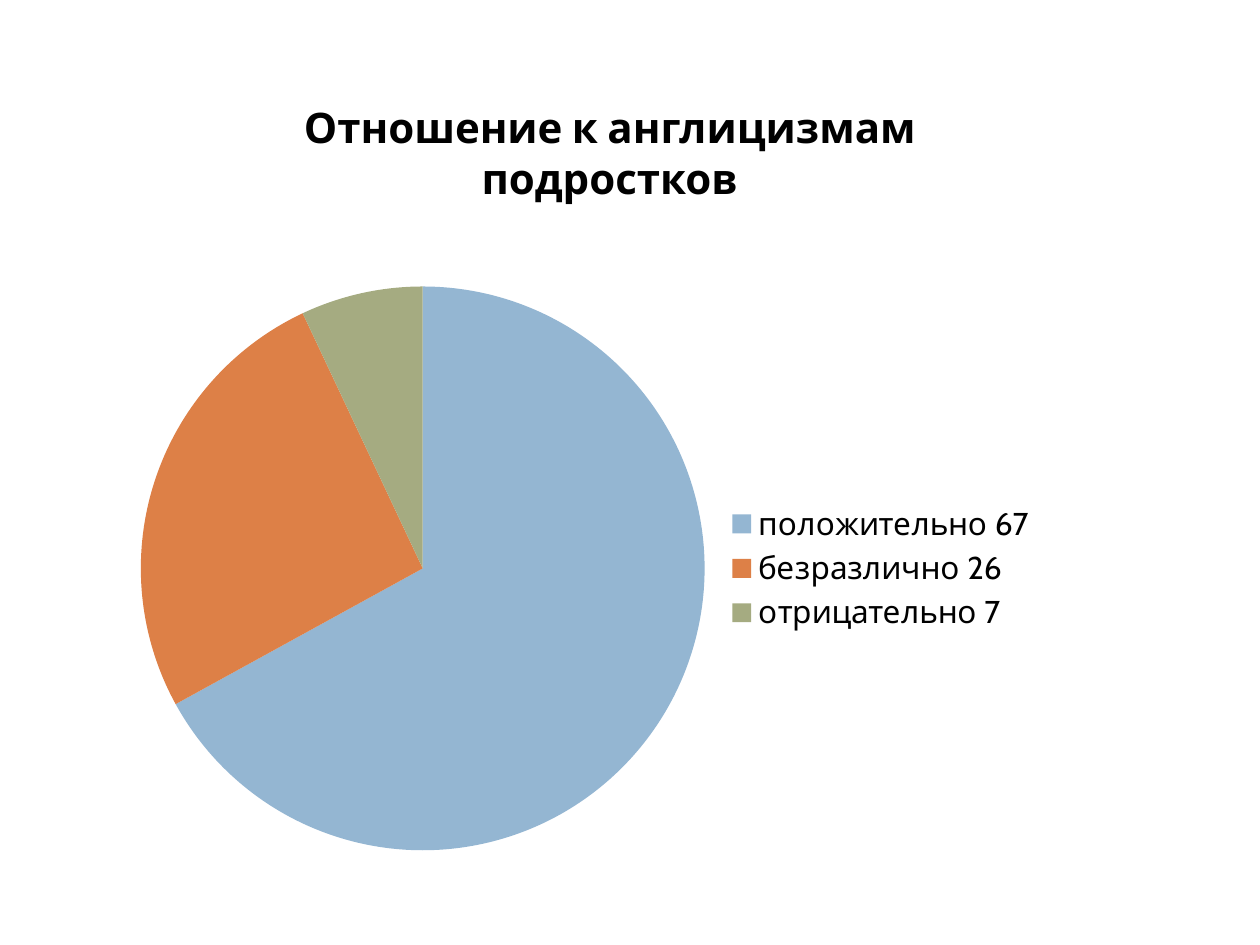
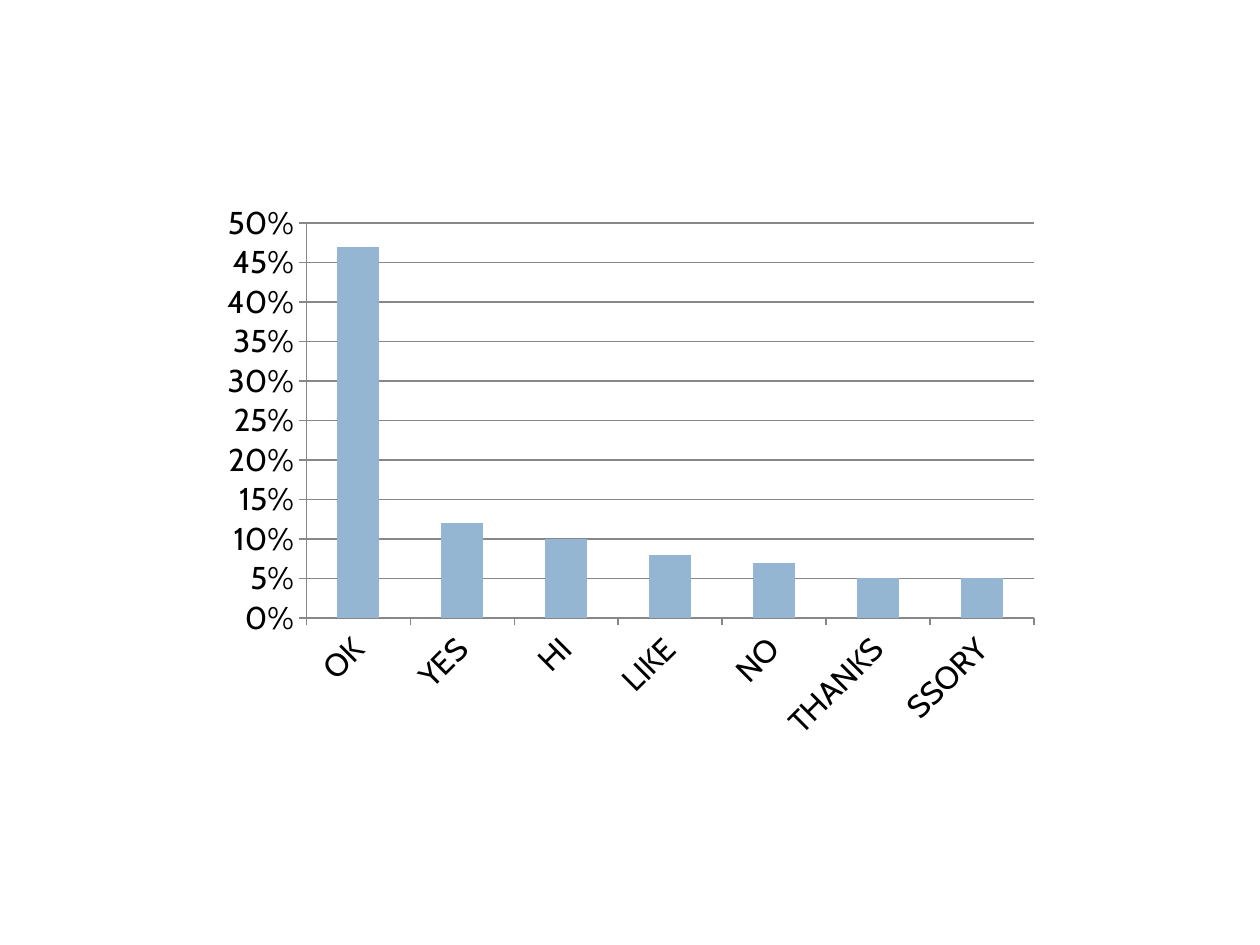
"""Build two slides on teenagers' attitude to anglicisms: a pie and a column chart."""
from dataclasses import dataclass

from pptx import Presentation
from pptx.chart.data import CategoryChartData
from pptx.dml.color import RGBColor
from pptx.enum.chart import XL_CHART_TYPE, XL_LEGEND_POSITION, XL_TICK_MARK
from pptx.enum.text import MSO_AUTO_SIZE, PP_ALIGN
from pptx.util import Inches, Pt


@dataclass(frozen=True)
class Theme:
    font: str = "Cabin"
    title_size: int = 24
    chart_size: int = 18
    ink: RGBColor = RGBColor.from_string("000000")
    grid: RGBColor = RGBColor.from_string("878787")
    blue: RGBColor = RGBColor.from_string("94B6D2")
    orange: RGBColor = RGBColor.from_string("DD8047")
    olive: RGBColor = RGBColor.from_string("A5AB81")


theme = Theme()
deck = Presentation()
deck.slide_width, deck.slide_height = Inches(10), Inches(7.5)
blank = deck.slide_layouts[6]


def place(left, top, width, height):
    return (int(deck.slide_width * left), int(deck.slide_height * top),
            int(deck.slide_width * width), int(deck.slide_height * height))


def add_text(page, text, area, size=theme.title_size, bold=False, align=PP_ALIGN.LEFT):
    box = page.shapes.add_textbox(*place(*area))
    box.text_frame.word_wrap = True
    box.text_frame.auto_size = MSO_AUTO_SIZE.SHAPE_TO_FIT_TEXT
    para = box.text_frame.paragraphs[0]
    para.alignment = align
    span = para.add_run()
    span.text = text
    span.font.name, span.font.size, span.font.bold = theme.font, Pt(size), bold
    span.font.color.rgb = theme.ink


attitudes = {"положительно 67": 67, "безразлично 26": 26, "отрицательно 7": 7}
words = {"OK": 0.47, "YES": 0.12, "HI": 0.1, "LIKE": 0.08, "NO": 0.07, "THANKS": 0.05, "SSORY": 0.05}
chart_plan = [
    (XL_CHART_TYPE.PIE, attitudes, "General", (0.098, 0.259, 0.735, 0.685)),
    (XL_CHART_TYPE.COLUMN_CLUSTERED, words, "0%", (0.167, 0.204, 0.667, 0.592)),
]

pages, charts = [], []
for kind, values, number_format, area in chart_plan:
    page = deck.slides.add_slide(blank)
    data = CategoryChartData(number_format=number_format)
    data.categories = list(values)
    data.add_series("Series 1", list(values.values()))
    chart = page.shapes.add_chart(kind, *place(*area), data).chart
    chart.has_title = False
    chart.has_legend = False
    chart.font.name, chart.font.size = theme.font, Pt(theme.chart_size)
    chart.font.color.rgb = theme.ink
    pages.append(page)
    charts.append(chart)

attitude_page = pages[0]
attitude_chart, word_chart = charts

add_text(attitude_page, "Отношение к англицизмам подростков", (0.177, 0.101, 0.614, 0.067),
         bold=True, align=PP_ALIGN.CENTER)
attitude_chart.has_legend = True
attitude_chart.legend.position = XL_LEGEND_POSITION.RIGHT
attitude_chart.legend.include_in_layout = False
attitude_chart.plots[0].vary_by_categories = True
for index, color in enumerate((theme.blue, theme.orange, theme.olive)):
    slice_fill = attitude_chart.plots[0].series[0].points[index].format.fill
    slice_fill.solid()
    slice_fill.fore_color.rgb = color

columns = word_chart.plots[0]
columns.vary_by_categories = False
columns.gap_width = 150
column_fill = columns.series[0].format.fill
column_fill.solid()
column_fill.fore_color.rgb = theme.blue
for axis in (word_chart.category_axis, word_chart.value_axis):
    axis.major_tick_mark = XL_TICK_MARK.OUTSIDE
    axis.minor_tick_mark = XL_TICK_MARK.NONE
    axis.format.line.color.rgb = theme.grid
value_axis = word_chart.value_axis
value_axis.has_major_gridlines = True
value_axis.major_gridlines.format.line.color.rgb = theme.grid
value_axis.tick_labels.number_format = "0%"
value_axis.tick_labels.number_format_is_linked = False

deck.save("out.pptx")
